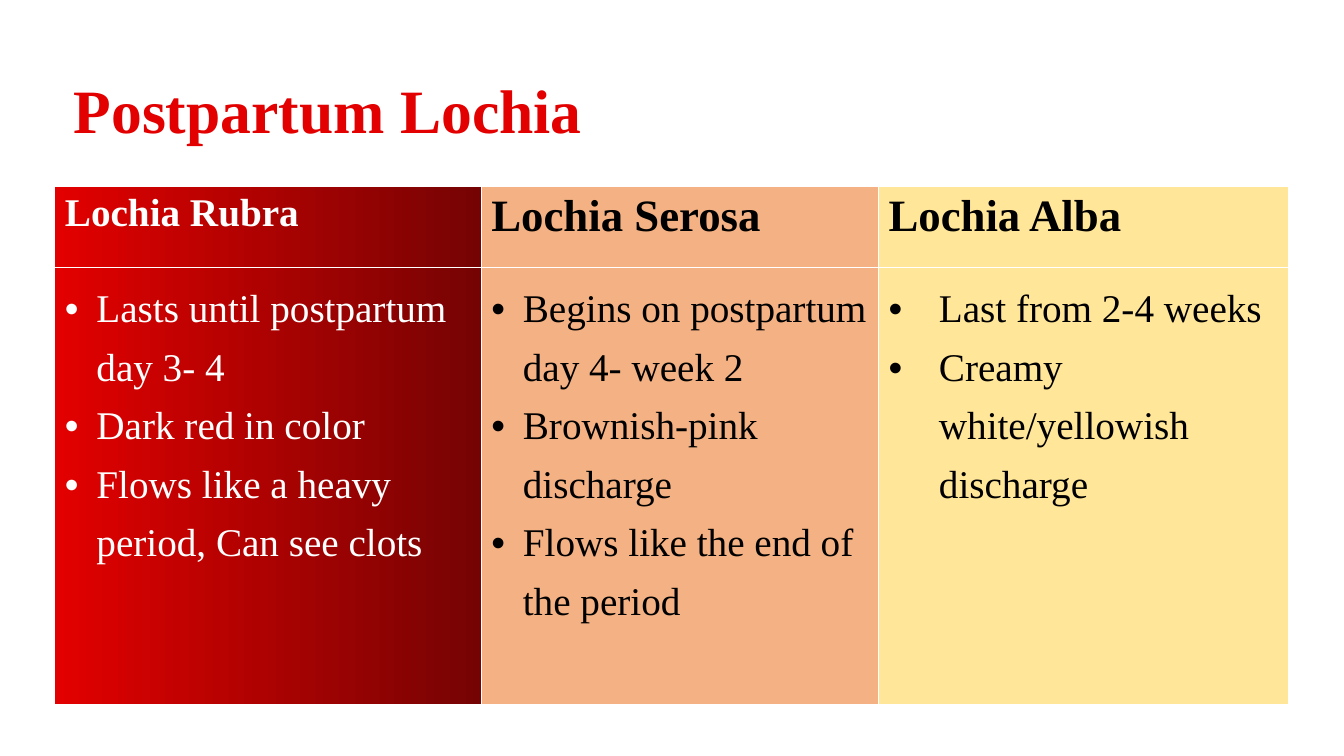
"""Build the Postpartum Lochia slide: a title above a three-column table."""
from lxml import etree
from pptx import Presentation
from pptx.dml import color
from pptx.enum import text
from pptx.oxml import ns
from pptx.util import Pt

RED = color.RGBColor(0xE3, 0x00, 0x00)
DARK_RED = color.RGBColor(0x76, 0x03, 0x03)
PEACH = color.RGBColor(0xF4, 0xB1, 0x83)
CREAM = color.RGBColor(0xFF, 0xE6, 0x99)
WHITE = color.RGBColor(0xFF, 0xFF, 0xFF)
BLACK = color.RGBColor(0x00, 0x00, 0x00)

STAGES = [
    {"name": "Lochia Rubra", "size": 28, "width": 304.6, "indent": 22.5,
     "fill": [RED, DARK_RED], "ink": WHITE,
     "points": ["Lasts until postpartum day 3- 4", "Dark red in color",
                "Flows like a heavy period, Can see clots"]},
    {"name": "Lochia Serosa", "size": 32, "width": 283.7, "indent": 22.5,
     "fill": [PEACH], "ink": BLACK,
     "points": ["Begins on postpartum day 4- week 2", "Brownish-pink discharge",
                "Flows like the end of the period"]},
    {"name": "Lochia Alba", "size": 32, "width": 293, "indent": 36,
     "fill": [CREAM], "ink": BLACK,
     "points": ["Last from 2-4 weeks", "Creamy white/yellowish discharge"]},
]
ROW_HEIGHTS = [57.6, 312.5]


def paint(fill, colors):
    if len(colors) == 1:
        fill.solid()
        fill.fore_color.rgb = colors[0]
        return
    fill.gradient()
    fill.gradient_angle = 0
    for stop, rgb in zip(fill.gradient_stops, colors):
        stop.color.rgb = rgb


def write(p, words, size, bold, colors):
    r = p.add_run()
    r.text = words
    for key, value in {"name": "Times New Roman", "size": Pt(size), "bold": bold}.items():
        setattr(r.font, key, value)
    paint(r.font.fill, colors)


prs = Presentation()
prs.slide_width, prs.slide_height = Pt(960), Pt(540)
s = prs.slides.add_slide(prs.slide_layouts[5])

title = s.shapes.title
for key, value in {"left": 45.4, "top": 28.8, "width": 848.2, "height": 104.4}.items():
    setattr(title, key, Pt(value))
tf = title.text_frame
tf.auto_size = text.MSO_AUTO_SIZE.NONE
tf.vertical_anchor = text.MSO_ANCHOR.MIDDLE
p = tf.paragraphs[0]
p.alignment = text.PP_ALIGN.LEFT
p.line_spacing = 0.9
write(p, "Postpartum Lochia", 44, True, [RED, DARK_RED])

total_width = sum(stage["width"] for stage in STAGES)
table = s.shapes.add_table(len(ROW_HEIGHTS), len(STAGES), Pt(39.2), Pt(133.4),
                           Pt(total_width), Pt(sum(ROW_HEIGHTS))).table
for row, height in zip(table.rows, ROW_HEIGHTS):
    row.height = Pt(height)

for col, stage in enumerate(STAGES):
    table.columns[col].width = Pt(stage["width"])
    head, body = table.cell(0, col), table.cell(1, col)
    for cell in (head, body):
        paint(cell.fill, stage["fill"])
    write(head.text_frame.paragraphs[0], stage["name"], stage["size"], True, [stage["ink"]])

    tf = body.text_frame
    for i, point in enumerate(stage["points"]):
        p = tf.add_paragraph() if i else tf.paragraphs[0]
        pPr = p._p.get_or_add_pPr()
        pPr.set("marL", str(Pt(stage["indent"])))
        pPr.set("indent", str(-Pt(stage["indent"])))
        etree.SubElement(pPr, ns.qn("a:buFont")).set("typeface", "Arial")
        etree.SubElement(pPr, ns.qn("a:buChar")).set("char", "•")
        p.line_spacing = 1.35
        write(p, point, 28, False, [stage["ink"]])

prs.save("out.pptx")
